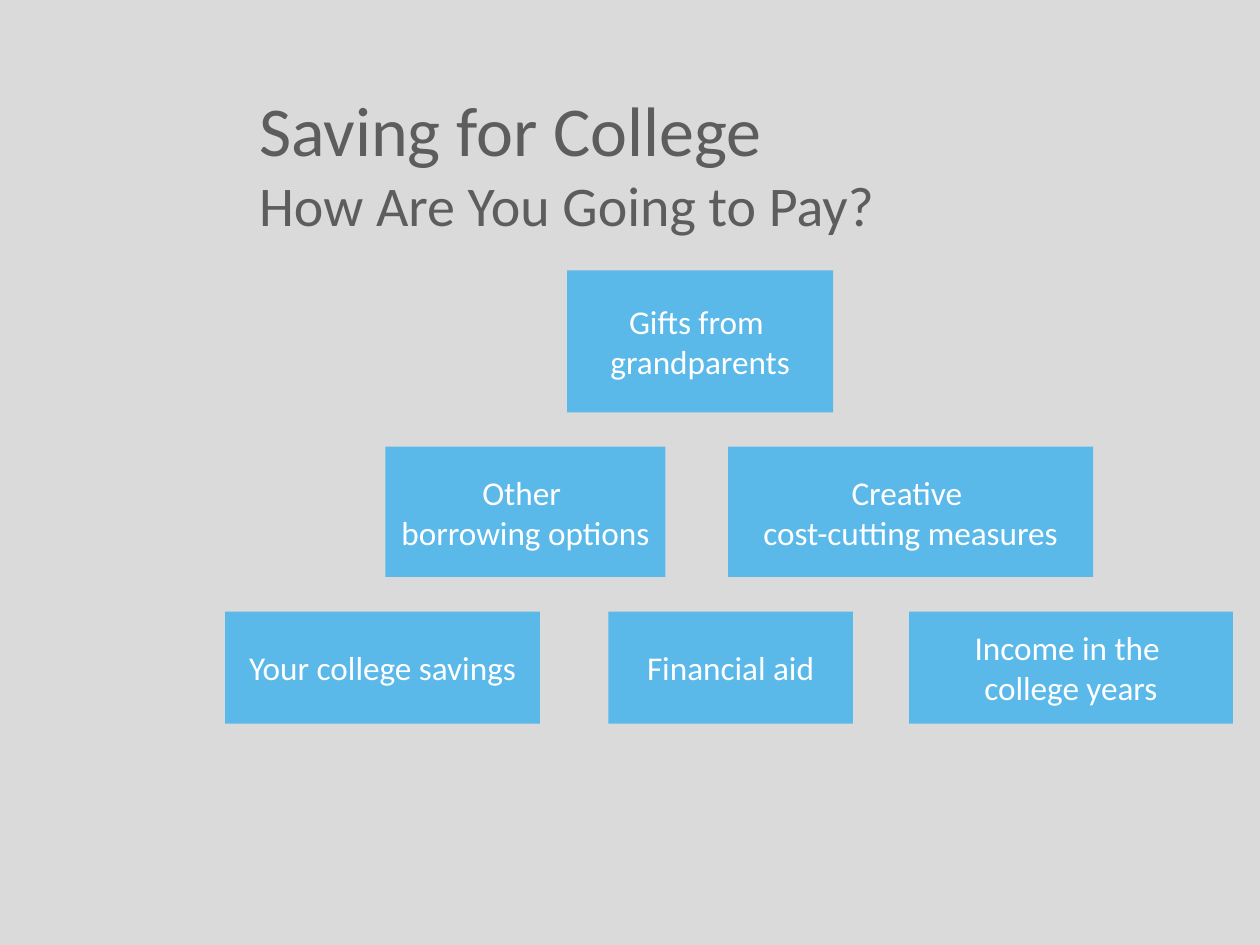
from pptx import Presentation
from pptx.dml.color import RGBColor
from pptx.enum.shapes import MSO_SHAPE
from pptx.enum.text import MSO_ANCHOR, PP_ALIGN
from pptx.util import Pt

RECTANGLE = MSO_SHAPE.RECTANGLE
MIDDLE = MSO_ANCHOR.MIDDLE
CENTER = PP_ALIGN.CENTER

BACKGROUND = RGBColor(0xDA, 0xDA, 0xDA)
TITLE_GRAY = RGBColor(0x5D, 0x5D, 0x5D)
BLOCK_BLUE = RGBColor(0x5B, 0xB9, 0xEA)
WHITE = RGBColor(0xFF, 0xFF, 0xFF)
FONT = "Calibri"

TITLE_LINES = [("Saving for College", 40), ("How Are You Going to Pay?", 32)]

# Pyramid rows: top, height, blocks as (left, width, text), in points
PYRAMID_ROWS = [
    (154.5, 81.25, [(324.1, 152, "Gifts from \ngrandparents")]),
    (255.25, 74.5, [(220.25, 160, "Other \nborrowing options"),
                    (416, 208.6, "Creative \ncost-cutting measures")]),
    (349.5, 64, [(128.6, 180, "Your college savings"),
                 (347.6, 139.8, "Financial aid"),
                 (519.5, 185, "Income in the \ncollege years")]),
]


def style_font(paragraph, size, color):
    paragraph.font.name = FONT
    paragraph.font.size = Pt(size)
    paragraph.font.color.rgb = color


def add_title(slide):
    box = slide.shapes.add_textbox(Pt(141), Pt(44.5), Pt(477), Pt(96))
    frame = box.text_frame
    frame.word_wrap = True
    frame.vertical_anchor = MIDDLE
    frame.text = "\n".join(text for text, size in TITLE_LINES)
    for paragraph, (text, size) in zip(frame.paragraphs, TITLE_LINES):
        style_font(paragraph, size, TITLE_GRAY)


def add_block(slide, left, top, width, height, text):
    block = slide.shapes.add_shape(RECTANGLE, Pt(left), Pt(top), Pt(width), Pt(height))
    block.shadow.inherit = False
    block.fill.solid()
    block.fill.fore_color.rgb = BLOCK_BLUE
    block.line.fill.background()
    frame = block.text_frame
    frame.word_wrap = False
    frame.vertical_anchor = MIDDLE
    frame.text = text
    for paragraph in frame.paragraphs:
        paragraph.alignment = CENTER
        style_font(paragraph, 19, WHITE)


def main():
    presentation = Presentation()
    presentation.slide_width = Pt(720)
    presentation.slide_height = Pt(540)
    slide = presentation.slides.add_slide(presentation.slide_layouts[6])
    slide.background.fill.solid()
    slide.background.fill.fore_color.rgb = BACKGROUND
    add_title(slide)
    for top, height, blocks in PYRAMID_ROWS:
        for left, width, text in blocks:
            add_block(slide, left, top, width, height, text)
    presentation.save("out.pptx")


if __name__ == "__main__":
    main()
